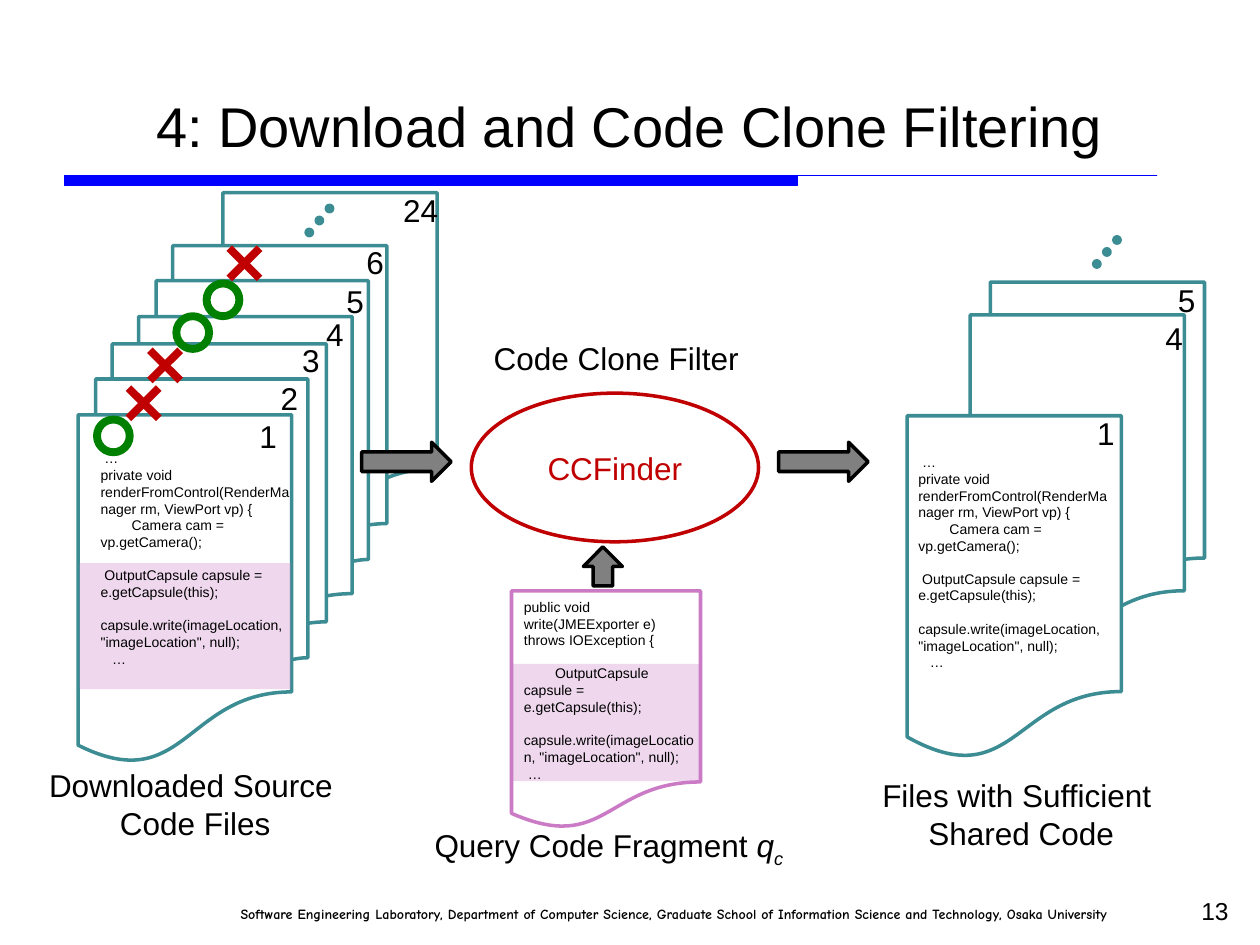
from lxml import etree
from pptx import Presentation
from pptx.dml.color import RGBColor
from pptx.enum.shapes import MSO_CONNECTOR, MSO_SHAPE
from pptx.enum.text import MSO_ANCHOR, MSO_AUTO_SIZE, PP_ALIGN
from pptx.oxml.ns import qn
from pptx.util import Inches, Pt

BLACK = RGBColor(0x00, 0x00, 0x00)
WHITE = RGBColor(0xFF, 0xFF, 0xFF)
BLUE = RGBColor(0x00, 0x00, 0xFF)
TEAL = RGBColor(0x3C, 0x8C, 0x93)
PINK = RGBColor(0xCB, 0x7B, 0xC5)
GREEN = RGBColor(0x00, 0x80, 0x00)
RED = RGBColor(0xC0, 0x00, 0x00)
GRAY = RGBColor(0x80, 0x80, 0x80)
RECT, OVAL, ARROW = MSO_SHAPE.RECTANGLE, MSO_SHAPE.OVAL, MSO_SHAPE.RIGHT_ARROW
DOC, STACK = MSO_SHAPE.FLOWCHART_DOCUMENT, MSO_SHAPE.FLOWCHART_MULTIDOCUMENT
STRAIGHT = MSO_CONNECTOR.STRAIGHT
LEFT, CENTER, RIGHT = PP_ALIGN.LEFT, PP_ALIGN.CENTER, PP_ALIGN.RIGHT
MIDDLE = MSO_ANCHOR.MIDDLE
GROW = MSO_AUTO_SIZE.SHAPE_TO_FIT_TEXT

FOUND = [
    " …",
    "private void renderFromControl(RenderManager rm, ViewPort vp) {",
    "        Camera cam = vp.getCamera();",
    " OutputCapsule capsule = e.getCapsule(this);",
    "        capsule.write(imageLocation, \"imageLocation\", null);",
    "   …",
]
QUERY = [
    "public void write(JMEExporter e) throws IOException {",
    "        OutputCapsule capsule = e.getCapsule(this);",
    "        capsule.write(imageLocation, \"imageLocation\", null);",
    " …",
]


def style(frame, size, color=BLACK, align=LEFT, font="Arial", bold=False):
    """Format every run of a text frame."""
    for para in frame.paragraphs:
        para.alignment = align
        for run in para.runs:
            run.font.size, run.font.name, run.font.bold = Pt(size), font, bold
            run.font.color.rgb = color


def label(slide, box, text, size=18, align=LEFT, wrap=False, **look):
    """Add a text box and return its frame."""
    frame = slide.shapes.add_textbox(*map(Inches, box)).text_frame
    frame.text = text
    frame.word_wrap = wrap
    if not wrap:
        frame.auto_size = GROW
    style(frame, size, align=align, **look)
    return frame


def code(slide, box, lines):
    """Add a code listing with a one-line gap before the capsule line."""
    frame = label(slide, box, "\n".join(lines), size=8, wrap=True)
    for para in frame.paragraphs[1:]:
        if "OutputCapsule" in para.text:
            para.space_before = Pt(9.2)


def shape(slide, kind, box, fill=None, line=None, width=2):
    """Add a preset shape with the given fill and outline."""
    item = slide.shapes.add_shape(kind, *map(Inches, box))
    item.shadow.inherit = False
    if fill is None:
        item.fill.background()
    else:
        item.fill.solid()
        item.fill.fore_color.rgb = fill
    if line is None:
        item.line.fill.background()
    else:
        item.line.color.rgb = line
        item.line.width = Pt(width)
    return item


def shade(slide, box):
    """Add a translucent band that marks shared code."""
    band = shape(slide, RECT, box, PINK)
    tint = band.fill._xPr.find(qn("a:solidFill"))[0]
    etree.SubElement(tint, qn("a:alpha")).set("val", "29000")


def cross(slide, x, y, side=0.24):
    """Add a red cross made of two grouped lines."""
    group = slide.shapes.add_group_shape()
    for top, end in ((y, y + side), (y + side, y)):
        stroke = group.shapes.add_connector(
            STRAIGHT, Inches(x), Inches(top), Inches(x + side), Inches(end))
        stroke.line.color.rgb = RED
        stroke.line.width = Pt(4.5)
        etree.SubElement(stroke._element.spPr, qn("a:effectLst"))


def dots(slide, x, y):
    """Add three dots that fall to the left."""
    for i in range(3):
        box = (x - 0.08 * i, y + 0.095 * i, 0.05, 0.05)
        shape(slide, OVAL, box, TEAL, TEAL)


def header(slide, x, y):
    """Add the title and the two-part rule below it."""
    frame = label(slide, (x, y, 9, 0.79), "4: Download and Code Clone Filtering",
                  size=32, align=CENTER, wrap=True)
    frame.vertical_anchor = MIDDLE
    left, top = x + 0.01, y + 0.79
    pen = slide.shapes.build_freeform(Inches(left), Inches(top))
    path = ((8.67, 0), (5.82, 0), (5.82, 0.08), (0, 0.08))
    pen.add_line_segments([(Inches(left + a), Inches(top + b)) for a, b in path])
    rule = pen.convert_to_shape()
    rule.shadow.inherit = False
    rule.fill.solid()
    rule.fill.fore_color.rgb = BLUE
    rule.line.color.rgb = BLUE
    rule.line.width = Pt(0.75)


def footer(slide, x, y):
    """Add the laboratory line and the page number."""
    label(slide, (x, y + 0.08, 8.07, 0.23),
          "Software Engineering Laboratory, Department of Computer Science, "
          "Graduate School of Information Science and Technology, Osaka University",
          size=8, align=RIGHT, wrap=True, font="Comic Neue", bold=True)
    label(slide, (x + 6.69, y, 2.33, 0.24), "13", size=14, align=RIGHT, wrap=True)


def source(slide, x, y):
    """Add the stack of downloaded files with their verdicts."""
    shape(slide, DOC, (x + 1.15, y, 1.7, 2.73), WHITE, TEAL)
    for dx, dy in ((0.48, 0.42), (0, 1.2)):
        shape(slide, STACK, (x + dx, y + dy, 1.97, 3.31), WHITE, TEAL)
    shade(slide, (x + 0.01, y + 2.94, 1.68, 1))
    code(slide, (x + 0.08, y + 1.99, 1.7, 1.85), FOUND)
    for dx, dy in ((0.15, 1.8), (0.78, 0.98), (1.02, 0.72)):
        shape(slide, OVAL, (x + dx, y + dy, 0.26, 0.26), line=GREEN, width=4.5)
    for dx, dy in ((1.2, 0.44), (0.4, 1.55), (0.57, 1.25)):
        cross(slide, x + dx, y + dy)
    spots = ((1.34, 1.73), (1.51, 1.43), (1.68, 1.13),
             (1.87, 0.92), (2.03, 0.66), (2.19, 0.35))
    for num, (dx, dy) in enumerate(spots, 1):
        label(slide, (x + dx, y + dy, 0.34, 0.4), str(num))
    label(slide, (x + 2.48, y - 0.06, 0.48, 0.4), "24")
    dots(slide, x + 1.97, y + 0.1)
    label(slide, (x - 0.34, y + 4.5, 2.47, 0.71),
          "Downloaded Source\v Code Files", align=CENTER)


def clone(slide, x, y):
    """Add the clone filter, its query fragment and the arrows."""
    label(slide, (x + 0.95, y, 2.22, 0.4), "Code Clone Filter")
    oval = shape(slide, OVAL, (x + 0.87, y + 0.48, 2.28, 1.18), line=RED)
    oval.text_frame.text = "CCFinder"
    oval.text_frame.vertical_anchor = MIDDLE
    style(oval.text_frame, 18, RED, CENTER)
    for dx in (0, 3.31):
        shape(slide, ARROW, (x + dx, y + 0.87, 0.71, 0.31), GRAY, BLACK)
    rise = shape(slide, ARROW, (x + 1.76, y + 1.7, 0.31, 0.31), GRAY, BLACK)
    rise.rotation = 270
    shade(slide, (x + 1.19, y + 2.63, 1.5, 0.93))
    shape(slide, DOC, (x + 1.19, y + 2.05, 1.5, 1.89), line=PINK)
    code(slide, (x + 1.19, y + 2.06, 1.57, 1.58), QUERY)
    frame = label(slide, (x + 0.48, y + 3.87, 3.05, 0.4), "Query Code Fragment ")
    para = frame.paragraphs[0]
    for text in "qc":
        para.add_run().text = text
    style(frame, 18)
    for run in para.runs[1:]:
        run.font.italic = True
    para.runs[2].font._element.set("baseline", "-25000")


def result(slide, x, y):
    """Add the files that passed the filter."""
    for dx, dy in ((0.66, 0.36), (0.5, 0.62), (0, 1.42)):
        shape(slide, DOC, (x + dx, y + dy, 1.7, 2.73), WHITE, TEAL)
    code(slide, (x - 0.01, y + 1.67, 1.7, 1.85), FOUND)
    for text, dx, dy in (("1", 1.41, 1.36), ("5", 2.05, 0.3), ("4", 1.95, 0.6)):
        label(slide, (x + dx, y + dy, 0.34, 0.4), text)
    dots(slide, x + 1.64, y)
    label(slide, (x - 0.31, y + 4.23, 2.43, 0.71),
          "Files with Sufficient \vShared Code", align=CENTER)


def main():
    """Build the slide and save it."""
    deck = Presentation()
    deck.slide_width, deck.slide_height = Inches(10), Inches(7.5)
    slide = deck.slides.add_slide(deck.slide_layouts[6])
    header(slide, 0.5, 0.6)
    footer(slide, 0.83, 7.06)
    source(slide, 0.62, 1.53)
    clone(slide, 2.87, 2.64)
    result(slide, 7.2, 1.88)
    deck.save("out.pptx")


if __name__ == "__main__":
    main()
